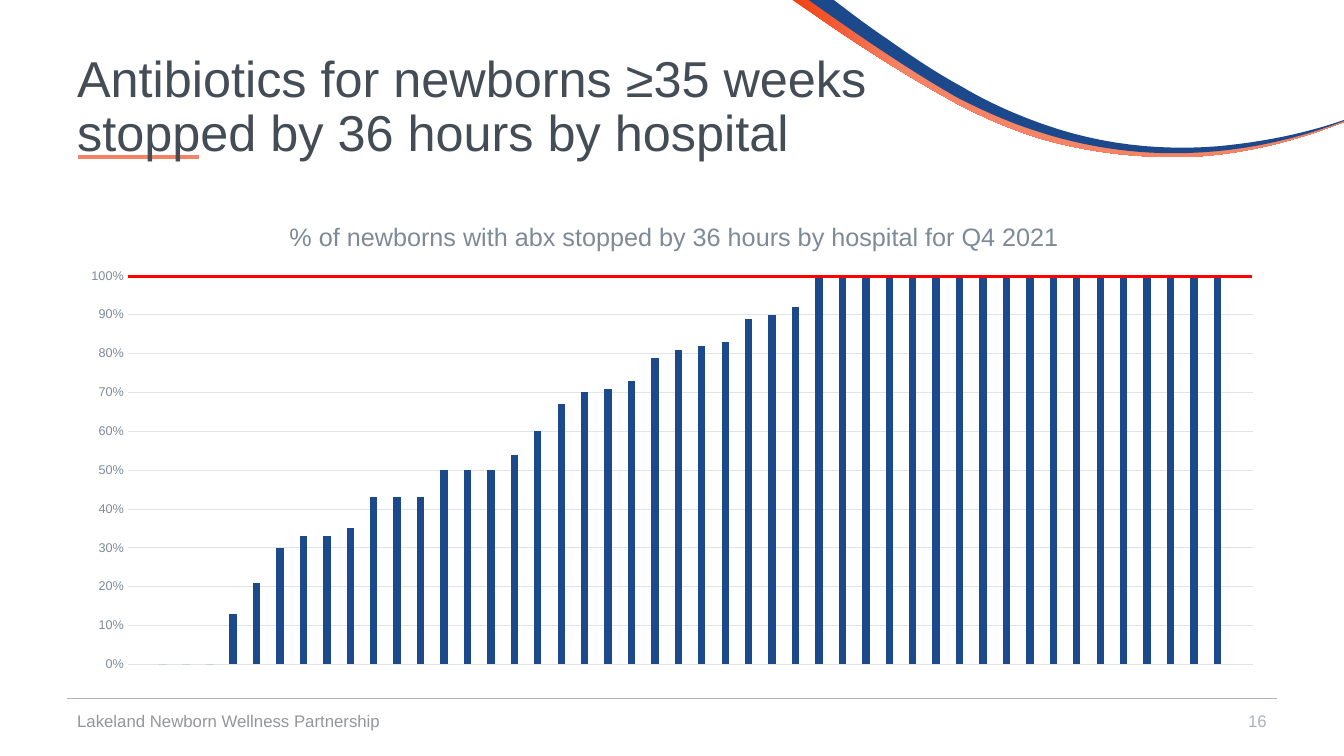
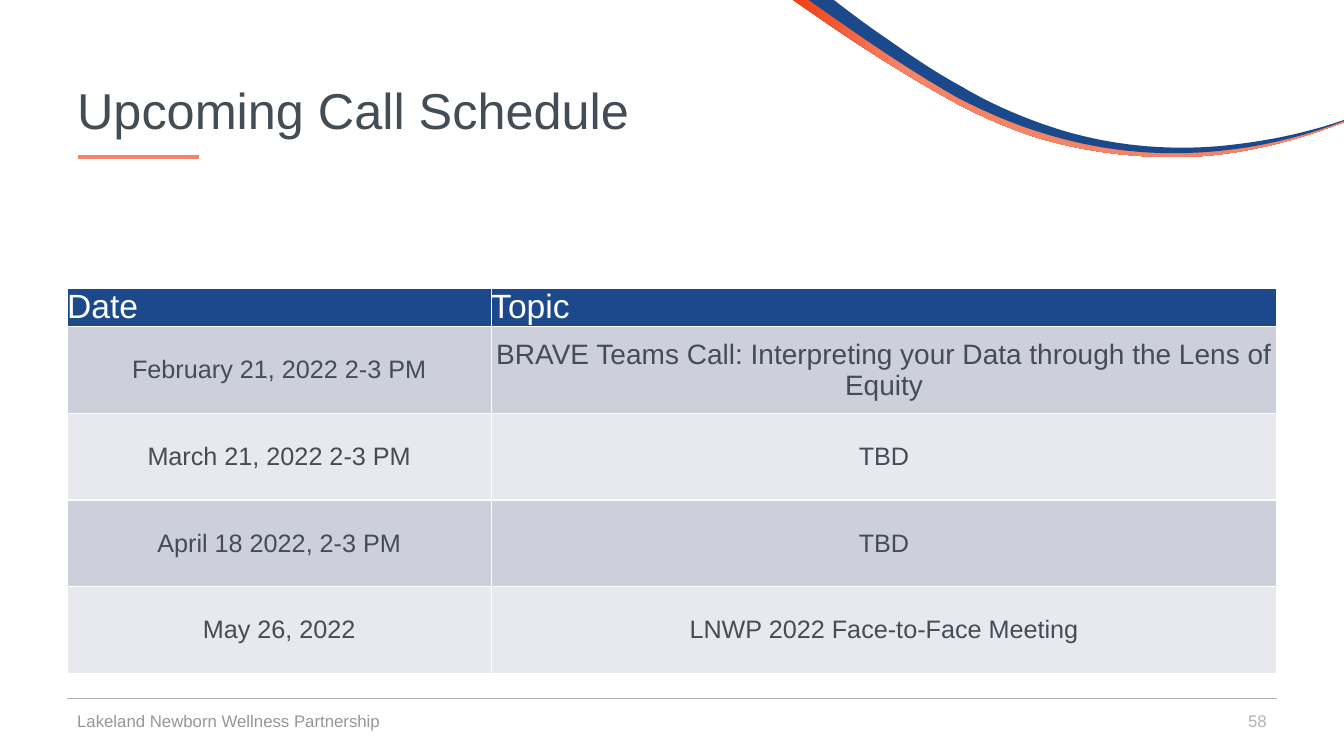
from lxml import etree
from pptx import Presentation
from pptx.chart.data import CategoryChartData as ChartData
from pptx.dml.color import RGBColor
from pptx.enum.chart import XL_CHART_TYPE as Kind, XL_TICK_MARK as Tick
from pptx.enum.shapes import MSO_CONNECTOR as Link
from pptx.enum.text import MSO_ANCHOR as Anchor, PP_ALIGN as Align
from pptx.oxml.ns import qn
from pptx.util import Inches, Pt

rgb = RGBColor.from_string
NAVY, CORAL, FLAME, RED, WHITE = "1C498B", "F58366", "F04115", "FF0000", "FFFFFF"
INK, SLATE, MIST, GREY, GRID = "444C55", "7E8A98", "AFB3B9", "949699", "E1E4E7"
BANDS = ["CDD0DA", "E8E9EE"]
FONT = "Arial"
FOOT = "Lakeland Newborn Wellness Partnership"

deck = Presentation()
deck.slide_width, deck.slide_height = Inches(13.33), Inches(7.5)
COL, ROW = deck.slide_width / 20, deck.slide_height / 30


def write(frame, text, size, color, align=Align.LEFT, space=1.0):
    para = frame.paragraphs[0]
    para.alignment, para.line_spacing = align, space
    for i, part in enumerate(text.split("\n")):
        if i:
            para.add_line_break()
        run = para.add_run()
        run.text = part
        font = run.font
        font.name, font.size, font.bold = FONT, Pt(size), False
        font.color.rgb = rgb(color)


def rule(page, left, right, top, color, width):
    x, end, y = int(left * COL), int(right * COL), int(top * ROW)
    line = page.shapes.add_connector(Link.STRAIGHT, x, y, end, y)
    line.line.color.rgb, line.line.width = rgb(color), Pt(width)
    etree.SubElement(line.element.spPr, qn("a:effectLst"))


RIBBONS = [
    (CORAL, [
        [(8.05, 0), (8.31, 0.18), (8.56, 0.37), (8.82, 0.54),
         (9.07, 0.71), (9.32, 0.86), (9.58, 0.99),
         (9.84, 1.13), (10.11, 1.24), (10.39, 1.33),
         (10.81, 1.46), (11.25, 1.52), (11.68, 1.52),
         (12.25, 1.52), (12.8, 1.4), (13.33, 1.2)],
        [(13.33, 1.21), (12.8, 1.42), (12.25, 1.55), (11.69, 1.56),
         (11.24, 1.56), (10.8, 1.51), (10.37, 1.39),
         (10.09, 1.31), (9.81, 1.19), (9.55, 1.06),
         (9.03, 0.78), (8.53, 0.46), (8.04, 0.12)],
        [(7.86, 0)]]),
    (NAVY, [
        [(8.27, 0), (8.44, 0.13), (8.61, 0.26), (8.79, 0.38),
         (9.03, 0.55), (9.28, 0.72), (9.54, 0.86),
         (9.79, 1.01), (10.06, 1.13), (10.34, 1.23),
         (10.9, 1.43), (11.5, 1.5), (12.09, 1.45),
         (12.51, 1.41), (12.93, 1.33), (13.33, 1.19)],
        [(13.33, 1.2), (12.79, 1.41), (12.22, 1.52), (11.64, 1.52),
         (11.19, 1.52), (10.74, 1.45), (10.31, 1.31),
         (10.02, 1.22), (9.75, 1.1), (9.48, 0.96),
         (8.96, 0.66), (8.5, 0.34), (8.02, 0)]]),
]
STEPS = 12
outlines = []
for color, edges in RIBBONS:
    dots = []
    for edge in edges:
        dots.append(tuple(Inches(v) for v in edge[0]))
        for k in range(0, len(edge) - 1, 3):
            for step in range(1, STEPS + 1):
                t = step / STEPS
                mix = [(1 - t) ** 3, 3 * t * (1 - t) ** 2, 3 * t * t * (1 - t), t ** 3]
                dots.append(tuple(
                    Inches(sum(m * dot[axis] for m, dot in zip(mix, edge[k:k + 4])))
                    for axis in (0, 1)))
    outlines.append((color, dots))

pages = []
for title, top, number in [
    ("Antibiotics for newborns ≥35 weeks\nstopped by 36 hours by hospital", 1.4, "16"),
    ("Upcoming Call Schedule", 1.6, "58"),
]:
    page = deck.slides.add_slide(deck.slide_layouts[6])
    pages.append(page)
    for color, dots in outlines:
        pen = page.shapes.build_freeform(*dots[0])
        pen.add_line_segments(dots[1:], close=True)
        band = pen.convert_to_shape()
        band.shadow.inherit = False
        band.line.fill.background()
        if color == CORAL:
            band.fill.gradient()
            band.fill.gradient_angle = 0
            for stop, tone, spot in zip(band.fill.gradient_stops, [FLAME, CORAL], [0, 0.2]):
                stop.color.rgb, stop.position = rgb(tone), spot
        else:
            band.fill.solid()
            band.fill.fore_color.rgb = rgb(color)
    rule(page, 1, 19, 27.72, MIST, 0.5)
    rule(page, 1.16, 2.96, 6.24, CORAL, 2.5)
    for text, left, y, wide, high, size, color, align, space in [
        (title, 1, top, 18, 5.8, 36, INK, Align.LEFT, 0.9),
        (number, 14.5, 27.8, 4.5, 1.6, 12, MIST, Align.RIGHT, 1.0),
        (FOOT, 1, 27.8, 6.75, 1.6, 12, GREY, Align.LEFT, 1.0),
    ]:
        box = page.shapes.add_textbox(
            int(left * COL), int(y * ROW), int(wide * COL), int(high * ROW))
        frame = box.text_frame
        frame.word_wrap, frame.vertical_anchor = True, Anchor.MIDDLE
        write(frame, text, size, color, align, space)

rates = [None, 0, 0, 0, 0.13, 0.21, 0.3, 0.33, 0.33, 0.35, 0.43, 0.43, 0.43,
         0.5, 0.5, 0.5, 0.54, 0.6, 0.67, 0.7, 0.71, 0.73, 0.79, 0.81, 0.82,
         0.83, 0.89, 0.9, 0.92] + [1] * 18 + [None]
data = ChartData(number_format="0%")
data.categories = [str(n + 1) for n in range(len(rates))]
data.add_series("Series 1", rates)
chart = pages[0].shapes.add_chart(
    Kind.COLUMN_CLUSTERED, int(COL), int(8 * ROW),
    int(18 * COL), int(19.04 * ROW), data).chart
chart.font.name, chart.font.size = FONT, Pt(10)
chart.font.color.rgb = rgb(INK)
chart.has_legend = False
chart.has_title = True
write(chart.chart_title.text_frame,
      "% of newborns with abx stopped by 36 hours by hospital for Q4 2021", 18, SLATE)
chart.category_axis.visible = False
axis = chart.value_axis
axis.minimum_scale, axis.maximum_scale, axis.major_unit = 0, 1, 0.1
axis.major_tick_mark = axis.minor_tick_mark = Tick.NONE
axis.format.line.fill.background()
grid = axis.major_gridlines.format.line
grid.color.rgb, grid.width = rgb(GRID), Pt(0.75)
ticks = axis.tick_labels
ticks.number_format, ticks.number_format_is_linked = "0%", False
ticks.font.name, ticks.font.size = FONT, Pt(9)
ticks.font.color.rgb = rgb(SLATE)
plot = chart.plots[0]
plot.gap_width, plot.overlap, plot.vary_by_categories = 219, -27, False
bars = plot.series[0]
bars.invert_if_negative = False
bars.format.fill.solid()
bars.format.fill.fore_color.rgb = rgb(NAVY)

root = chart.element.find(qn("c:chart"))
for tag, slot, spots in [
    ("c:title", 1, [("xMode", "edge"), ("yMode", "edge"), ("x", "0.18"), ("y", "0.03")]),
    ("c:plotArea", 0, [("layoutTarget", "inner"), ("xMode", "edge"), ("yMode", "edge"),
                       ("x", "0.05"), ("y", "0.155"), ("w", "0.93"), ("h", "0.81")]),
]:
    host = root.find(qn(tag))
    for old in host.findall(qn("c:layout")):
        host.remove(old)
    place = etree.Element(qn("c:layout"))
    hand = etree.SubElement(place, qn("c:manualLayout"))
    for name, val in spots:
        etree.SubElement(hand, qn("c:" + name)).set("val", val)
    host.insert(slot, place)
rule(pages[0], 1.9, 18.63, 10.96, RED, 2.25)

calls = [
    ("Date", "Topic"),
    ("February 21, 2022 2-3 PM",
     "BRAVE Teams Call: Interpreting your Data through the Lens of Equity"),
    ("March 21, 2022 2-3 PM", "TBD"),
    ("April 18 2022, 2-3 PM", "TBD"),
    ("May 26, 2022", "LNWP 2022 Face-to-Face Meeting"),
]
table = pages[1].shapes.add_table(
    len(calls), 2, int(COL), int(11.44 * ROW), int(18 * COL), int(15.16 * ROW)).table
for column, wide in zip(table.columns, [6.31, 11.69]):
    column.width = int(wide * COL)
for r, call in enumerate(calls):
    table.rows[r].height = int((3.44 if r else 1.4) * ROW)
    for c, text in enumerate(call):
        cell = table.cell(r, c)
        cell.margin_left = cell.margin_right = cell.margin_top = cell.margin_bottom = 0
        cell.vertical_anchor = Anchor.MIDDLE
        cell.fill.solid()
        cell.fill.fore_color.rgb = rgb(BANDS[(r - 1) % 2] if r else NAVY)
        if r:
            size = 20 if (r, c) == (1, 1) else 18
            write(cell.text_frame, text, size, INK, Align.CENTER)
        else:
            write(cell.text_frame, text, 24, WHITE, space=0.95)

deck.save("out.pptx")
